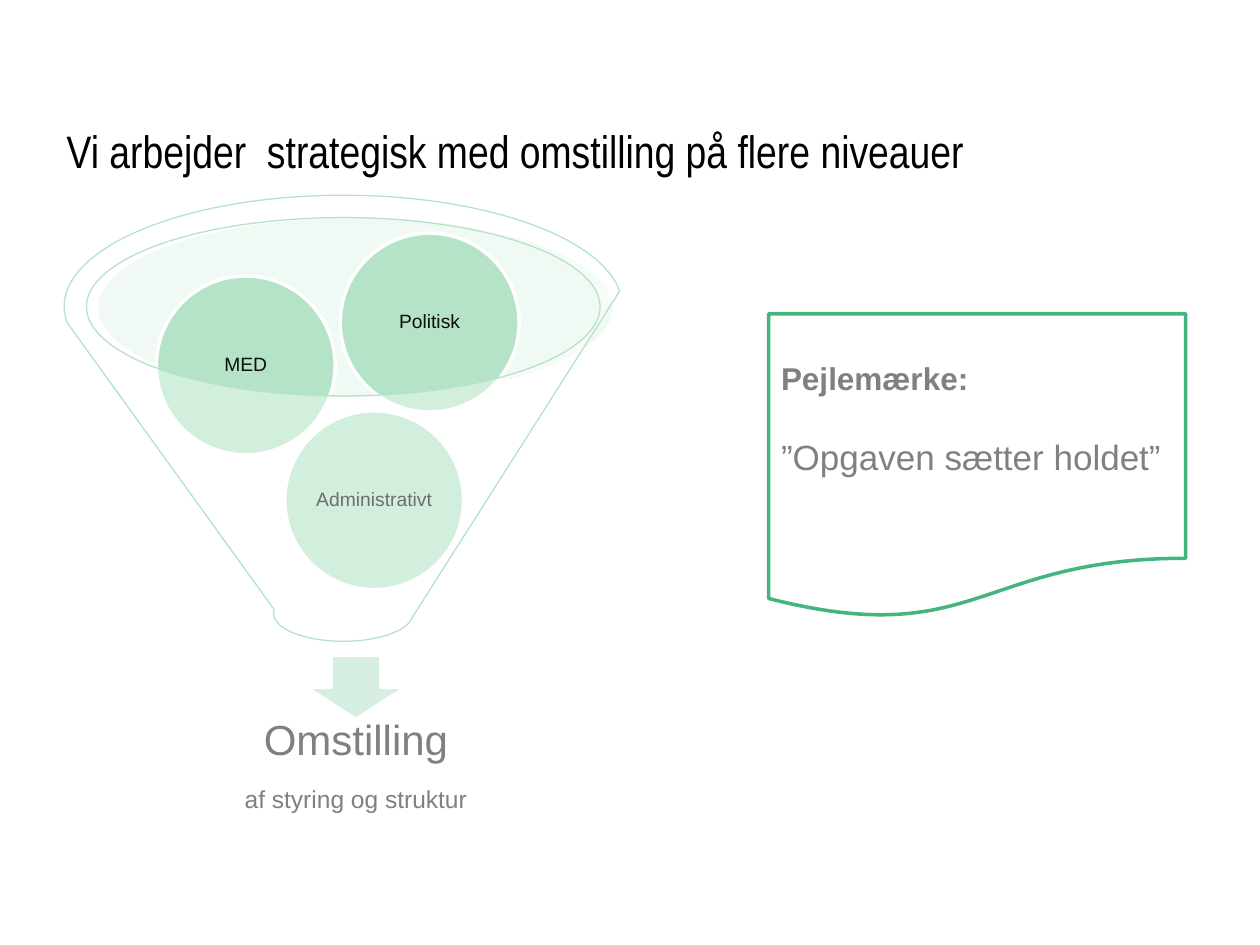
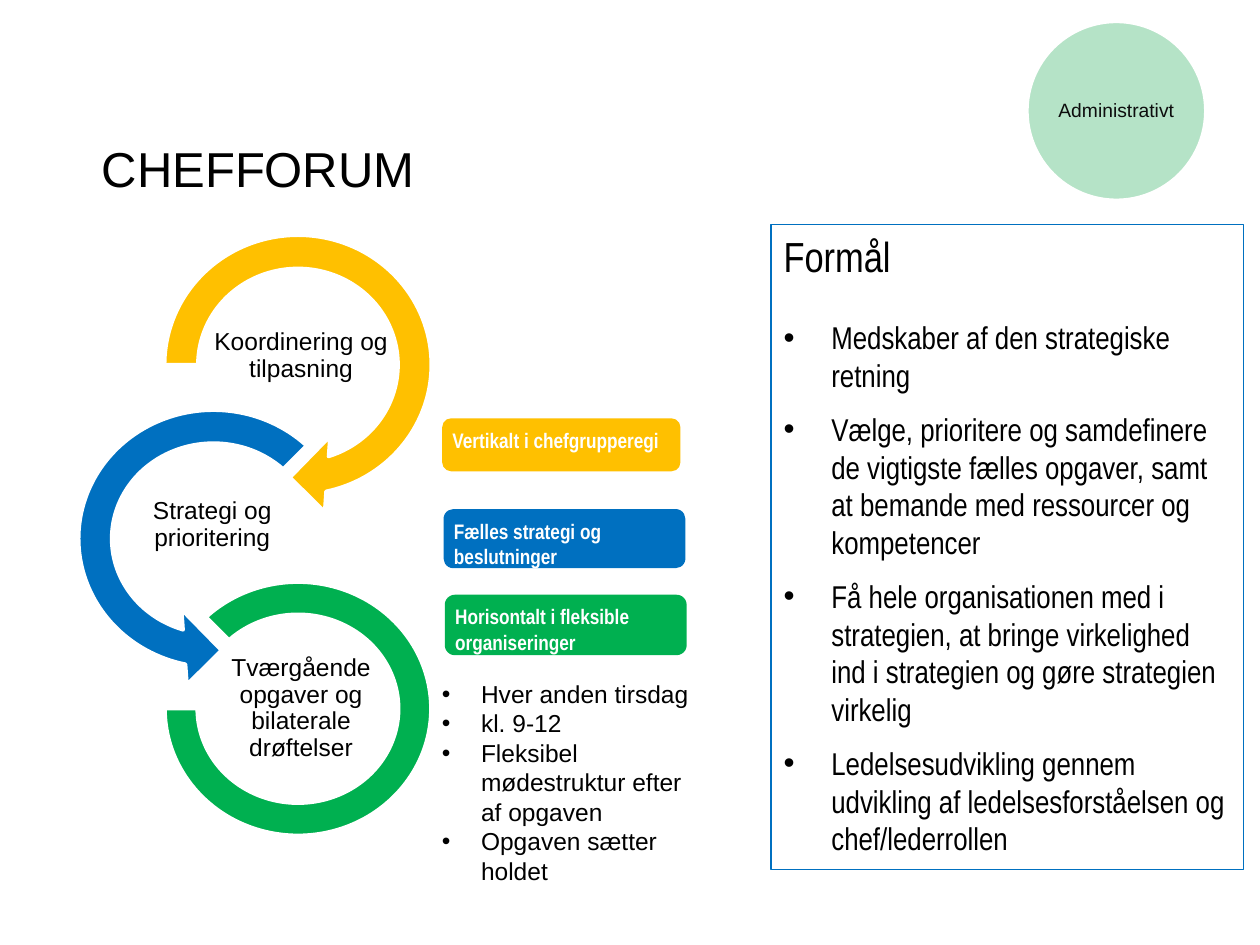
from dataclasses import dataclass
from typing import Optional

from lxml import etree
from pptx import Presentation
from pptx.dml.color import RGBColor
from pptx.enum.shapes import MSO_SHAPE
from pptx.enum.text import MSO_ANCHOR, PP_ALIGN
from pptx.oxml.ns import qn
from pptx.util import Inches, Pt

ELLIPSE, FUNNEL = MSO_SHAPE.OVAL, MSO_SHAPE.FUNNEL
DOWN_ARROW, DOCUMENT = MSO_SHAPE.DOWN_ARROW, MSO_SHAPE.FLOWCHART_DOCUMENT
RECTANGLE, PILL = MSO_SHAPE.RECTANGLE, MSO_SHAPE.ROUNDED_RECTANGLE
RIGHT_TURN, LEFT_TURN = MSO_SHAPE.CIRCULAR_ARROW, MSO_SHAPE.LEFT_CIRCULAR_ARROW
OPEN_RING = MSO_SHAPE.BLOCK_ARC
LEFT, CENTER = PP_ALIGN.LEFT, PP_ALIGN.CENTER
TOP, MIDDLE = MSO_ANCHOR.TOP, MSO_ANCHOR.MIDDLE

BLACK = RGBColor(0x00, 0x00, 0x00)
NEAR_BLACK = RGBColor(0x0D, 0x0D, 0x0D)
GREY = RGBColor(0x80, 0x80, 0x80)
WHITE = RGBColor(0xFF, 0xFF, 0xFF)
MINT = RGBColor(0xB5, 0xE3, 0xC7)
PALE_MINT = RGBColor(0xDE, 0xF2, 0xE5)
ARROW_MINT = RGBColor(0xD7, 0xEF, 0xE0)
FRAME_GREEN = RGBColor(0x45, 0xB5, 0x80)
YELLOW = RGBColor(0xFF, 0xC0, 0x00)
BLUE = RGBColor(0x00, 0x70, 0xC0)
GREEN = RGBColor(0x00, 0xB0, 0x50)

SANS, NARROW = "Arial", "Arial Narrow"

# The slide is a grid of 100 columns and 75 rows of square cells.
COLUMNS, ROWS, CELL = 100, 75, Inches(0.1)
CIRCLE = 14.2
LEVEL_INSETS = (0.02,) * 4
STEP_INSETS = (0.01,) * 4
PILL_INSETS = (0.06, 0.05, 0.03, 0.05)
PLAIN_INSETS = (0.1, 0.05, 0.1, 0.05)


@dataclass(frozen=True)
class Area:
    column: float
    row: float
    columns: float
    rows: float

    def lengths(self) -> list[int]:
        return [round(cells * CELL) for cells in
                (self.column, self.row, self.columns, self.rows)]


@dataclass(frozen=True)
class Line:
    text: str
    size: float
    color: RGBColor = BLACK
    font: str = SANS
    bold: bool = False
    align: PP_ALIGN = LEFT
    spacing: Optional[float] = None
    after: float = 0
    bullet_indent: float = 0


@dataclass(frozen=True)
class Step:
    """One turn of the chain, with its caption and matching pill."""
    outline: MSO_SHAPE
    area: Area
    adjustments: tuple[float, ...]
    color: RGBColor
    caption: str
    caption_area: Area
    pill: str
    pill_area: Area


@dataclass(frozen=True)
class Level:
    name: str
    column: float
    row: float


LEVELS = [
    Level("Administrativt", 22.6, 32.6),
    Level("MED", 12.4, 21.9),
    Level("Politisk", 27, 18.5),
]

STEPS = [
    Step(RIGHT_TURN, Area(11.4, 17, 24.5, 23.9),
         (0.11, 11.42, 45, 108, 0.125), YELLOW,
         "Koordinering og tilpasning", Area(16.5, 24, 14.8, 8.5),
         "Vertikalt i chefgrupperegi", Area(35.1, 33.2, 18.9, 4.2)),
    Step(LEFT_TURN, Area(4.6, 30.9, 24.7, 23.7),
         (0.11, 11.42, 63, 189, 0.125), BLUE,
         "Strategi og prioritering", Area(10.4, 37.4, 12.9, 8.5),
         "Fælles strategi og beslutninger", Area(35.2, 40.4, 19.2, 4.7)),
    Step(OPEN_RING, Area(13.1, 46.2, 21.1, 20.1),
         (135, 108, 0.127), GREEN,
         "Tværgående opgaver og bilaterale drøftelser", Area(17.9, 52, 12, 8.5),
         "Horisontalt i fleksible organiseringer", Area(35.3, 47.2, 19.2, 4.8)),
]

PURPOSES = [
    "Medskaber af den strategiske retning",
    "Vælge, prioritere og samdefinere de vigtigste fælles opgaver, samt at "
    "bemande med ressourcer og kompetencer",
    "Få hele organisationen med i strategien, at bringe virkelighed ind i "
    "strategien og gøre strategien virkelig",
    "Ledelsesudvikling gennem udvikling af ledelsesforståelsen og "
    "chef/lederrollen",
]

MEETINGS = [
    "Hver anden tirsdag",
    "kl. 9-12",
    "Fleksibel mødestruktur efter af opgaven",
    "Opgaven sætter holdet",
]


def write(holder, lines: list[Line], insets=PLAIN_INSETS, anchor=TOP,
          wrap: bool = True) -> None:
    frame = holder.text_frame
    frame.word_wrap = wrap
    frame.vertical_anchor = anchor
    (frame.margin_left, frame.margin_top,
     frame.margin_right, frame.margin_bottom) = map(Inches, insets)
    for index, line in enumerate(lines):
        paragraph = frame.add_paragraph() if index else frame.paragraphs[0]
        paragraph.text = line.text
        paragraph.alignment = line.align
        paragraph.space_after = Pt(line.after)
        if line.spacing:
            paragraph.line_spacing = line.spacing
        if line.bullet_indent:
            add_bullet(paragraph, line.bullet_indent)
        font = paragraph.font
        font.name, font.size, font.bold = line.font, Pt(line.size), line.bold
        font.color.rgb = line.color


def add_bullet(paragraph, indent: float) -> None:
    properties = paragraph._p.get_or_add_pPr()
    properties.set("marL", str(Inches(indent)))
    properties.set("indent", str(-Inches(indent)))
    etree.SubElement(properties, qn("a:buFont")).set("typeface", SANS)
    etree.SubElement(properties, qn("a:buChar")).set("char", "•")


def draw(slide, outline: MSO_SHAPE, area: Area,
         fill: Optional[RGBColor] = None, line: Optional[RGBColor] = None,
         weight: float = 2, opacity: int = 100,
         adjustments: tuple[float, ...] = ()):
    shape = slide.shapes.add_shape(outline, *area.lengths())
    shape.shadow.inherit = False
    for index, value in enumerate(adjustments):
        shape.adjustments[index] = value
    if fill is None:
        shape.fill.background()
    else:
        shape.fill.solid()
        shape.fill.fore_color.rgb = fill
        if opacity < 100:
            color = shape.fill._xPr.find(qn("a:solidFill"))[0]
            etree.SubElement(color, qn("a:alpha")).set("val", str(opacity * 1000))
    if line is None:
        shape.line.fill.background()
    else:
        shape.line.color.rgb = line
        shape.line.width = Pt(weight)
    return shape


def add_text(slide, area: Area, lines: list[Line], **layout) -> None:
    write(slide.shapes.add_textbox(*area.lengths()), lines, **layout)


def centered(text: str, size: float, color: RGBColor, after: float = 0) -> Line:
    return Line(text, size, color, align=CENTER, spacing=0.9, after=after)


def draw_level(slide, level: Level) -> None:
    circle = draw(slide, ELLIPSE, Area(level.column, level.row, CIRCLE, CIRCLE),
                  MINT, WHITE)
    write(circle, [centered(level.name, 11, NEAR_BLACK)], LEVEL_INSETS, MIDDLE)


def draw_step(slide, step: Step) -> None:
    draw(slide, step.outline, step.area, step.color, WHITE,
         adjustments=step.adjustments)
    add_text(slide, step.caption_area, [centered(step.caption, 14, BLACK)],
             insets=STEP_INSETS, anchor=MIDDLE)
    pill = draw(slide, PILL, step.pill_area, step.color)
    write(pill, [Line(step.pill, 12, WHITE, NARROW, bold=True)], PILL_INSETS)


def build_levels_slide(slide) -> None:
    draw(slide, ELLIPSE, Area(7.8, 17.3, 40.8, 14.2), PALE_MINT, opacity=40)
    draw(slide, DOWN_ARROW, Area(24.3, 52, 7.9, 5.1), ARROW_MINT, WHITE)
    add_text(slide, Area(9.3, 56.1, 37.9, 9.5),
             [centered("Omstilling", 24, GREY, after=13),
              centered("af styring og struktur", 14, GREY)],
             insets=(0.19,) * 4, anchor=MIDDLE)
    for level in LEVELS:
        draw_level(slide, level)
    draw(slide, FUNNEL, Area(5.1, 15.5, 44.3, 35.4), WHITE, MINT, 0.75, opacity=40)
    add_text(slide, Area(4.3, 9.3, 79.5, 5.4),
             [Line("Vi arbejder  strategisk med omstilling på flere niveauer",
                   26, font=NARROW)])
    guidepost = draw(slide, DOCUMENT, Area(61, 24.9, 33.1, 24.2),
                     WHITE, FRAME_GREEN)
    write(guidepost,
          [Line("Pejlemærke:", 18, GREY, bold=True, after=22),
           Line("”Opgaven sætter holdet”", 20, GREY)],
          insets=(0.1, 0.36, 0.1, 0.05))


def build_forum_slide(slide) -> None:
    purpose = draw(slide, RECTANGLE, Area(61.2, 17.8, 37.5, 51.2),
                   line=BLUE, weight=0.75)
    write(purpose, [Line("Formål", 24, font=NARROW, after=21.5)]
          + [Line(text, 18, font=NARROW, after=9, bullet_indent=0.38)
             for text in PURPOSES])
    add_text(slide, Area(7.1, 10.5, 27.1, 10.4), [Line("CHEFFORUM", 28)],
             wrap=False)
    for step in STEPS:
        draw_step(slide, step)
    add_text(slide, Area(34.1, 53.4, 23, 17.5),
             [Line(text, 14, bullet_indent=0.31) for text in MEETINGS])
    draw_level(slide, Level("Administrativt", 81.5, 1.7))


def main() -> None:
    deck = Presentation()
    deck.slide_width, deck.slide_height = COLUMNS * CELL, ROWS * CELL
    blank = deck.slide_layouts[6]
    for build in (build_levels_slide, build_forum_slide):
        build(deck.slides.add_slide(blank))
    deck.save("out.pptx")


if __name__ == "__main__":
    main()
